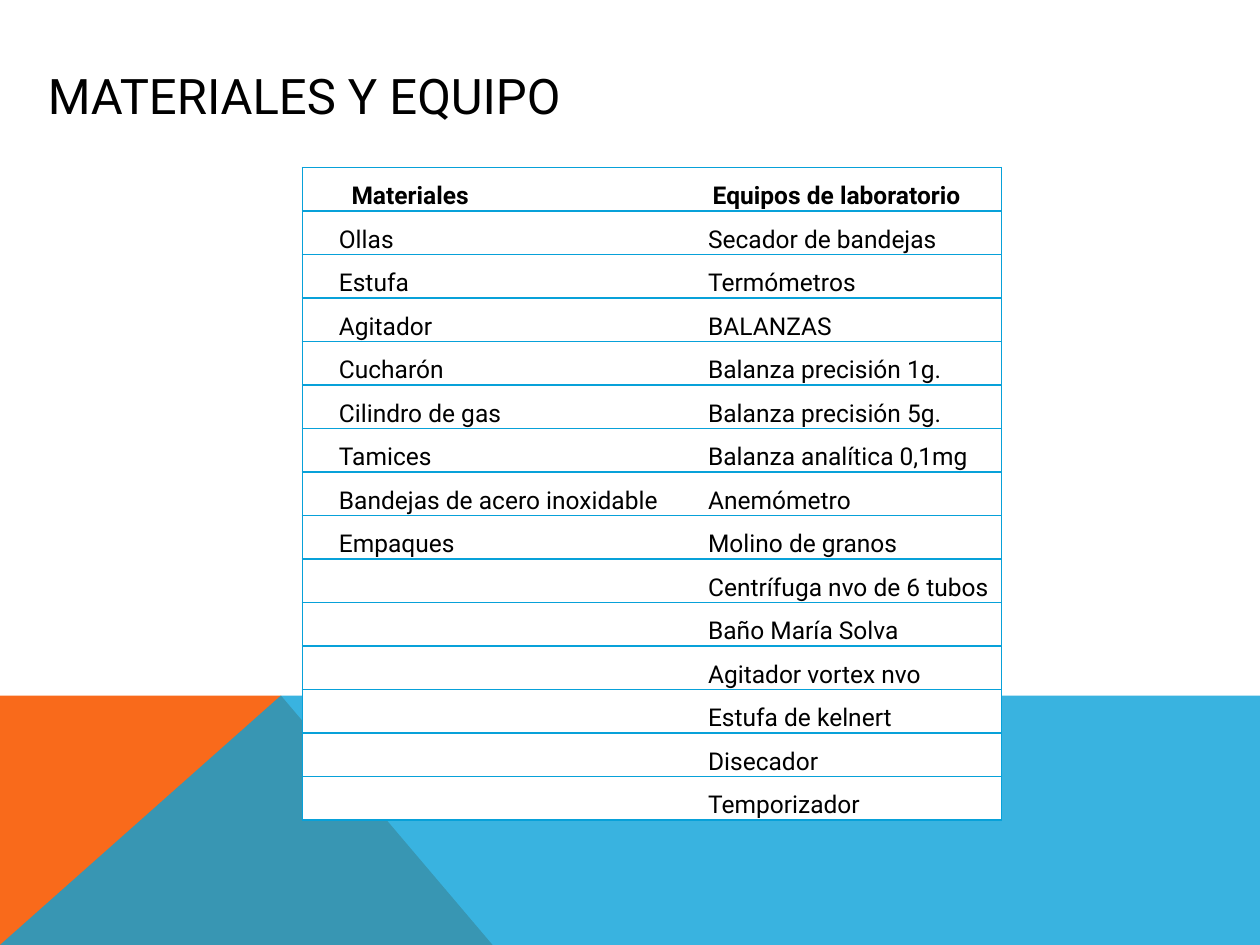
from dataclasses import dataclass
from itertools import zip_longest

from lxml import etree
from pptx import Presentation
from pptx.dml.color import RGBColor
from pptx.enum import text
from pptx.oxml.ns import qn
from pptx.util import Inches, Pt


@dataclass(frozen=True)
class Theme:
    font: str = "Roboto"
    ink: str = "000000"
    paper: str = "FFFFFF"
    blue: str = "08A1D9"
    orange: str = "F96A1B"
    title_size: int = 28
    cell_size: int = 14


@dataclass(frozen=True)
class Band:
    points: tuple
    color: str
    alpha: int = 100


@dataclass(frozen=True)
class Column:
    width: float
    header: str
    header_indent: float
    header_align: text.PP_ALIGN
    items: tuple
    sides: str  # edges that carry a line


T = Theme()
ITEM_INDENT = 0.25
ROW_HEIGHT = 0.26
BAND_TOP = 5.52
PEAK_X = 2.23

BANDS = (
    Band(((0, 7.5), (0, BAND_TOP), (PEAK_X, BAND_TOP), (3.91, 7.5)), T.orange),
    Band(((0, 7.5), (PEAK_X, BAND_TOP), (10, BAND_TOP), (10, 7.5)), T.blue, 80),
)

COLUMNS = (
    Column(2.93, "Materiales", 0.35, text.PP_ALIGN.LEFT,
           ("Ollas", "Estufa", "Agitador", "Cucharón", "Cilindro de gas",
            "Tamices", "Bandejas de acero inoxidable", "Empaques"), "LTB"),
    Column(2.62, "Equipos de laboratorio", 0, text.PP_ALIGN.CENTER,
           ("Secador de bandejas", "Termómetros", "BALANZAS",
            "Balanza precisión 1g.", "Balanza precisión 5g.",
            "Balanza analítica 0,1mg", "Anemómetro", "Molino de granos",
            "Centrífuga nvo de 6 tubos", "Baño María Solva",
            "Agitador vortex nvo", "Estufa de kelnert", "Disecador",
            "Temporizador"), "RTB"),
)


def style_runs(p, size: int, bold: bool = False) -> None:
    for r in p.runs:
        r.font.name = T.font
        r.font.size = Pt(size)
        r.font.bold = bold
        r.font.color.rgb = RGBColor.from_string(T.ink)


def draw_band(s, band: Band) -> None:
    start, *rest = [(Inches(x), Inches(y)) for x, y in band.points]
    builder = s.shapes.build_freeform(*start)
    builder.add_line_segments(rest, close=True)
    sp = builder.convert_to_shape()
    sp.shadow.inherit = False
    sp.line.fill.background()
    sp.fill.solid()
    sp.fill.fore_color.rgb = RGBColor.from_string(band.color)
    if band.alpha < 100:
        clr = sp.fill._xPr.find(qn("a:solidFill"))[0]
        etree.SubElement(clr, qn("a:alpha"), val=str(band.alpha * 1000))


def set_borders(cell, sides: str) -> None:
    tcPr = cell._tc.get_or_add_tcPr()
    for i, side in enumerate("LRTB"):  # lines precede the fill
        ln = etree.Element(qn(f"a:ln{side}"), w=str(Pt(1)))
        if side in sides:
            fill = etree.SubElement(ln, qn("a:solidFill"))
            etree.SubElement(fill, qn("a:srgbClr"), val=T.blue)
        else:
            etree.SubElement(ln, qn("a:noFill"))
        tcPr.insert(i, ln)


def fill_cell(cell, value: str, indent: float, align, bold: bool, sides: str) -> None:
    cell.margin_left = cell.margin_right = Inches(0.04)
    cell.margin_top = cell.margin_bottom = 0
    cell.fill.solid()
    cell.fill.fore_color.rgb = RGBColor.from_string(T.paper)
    set_borders(cell, sides)
    if not value:
        return
    cell.text_frame.text = value
    p = cell.text_frame.paragraphs[0]
    p.alignment = align
    p.line_spacing = 1.5
    p.space_before = Pt(6)
    pPr = p._p.get_or_add_pPr()
    pPr.set("marL", str(Inches(indent)))
    pPr.set("indent", "0")
    style_runs(p, T.cell_size, bold)


def draw_table(s, columns: tuple, left: float, top: float) -> None:
    rows = list(zip_longest(*(c.items for c in columns), fillvalue=""))
    n = len(rows) + 1
    width = sum(c.width for c in columns)
    table = s.shapes.add_table(n, len(columns), Inches(left), Inches(top),
                               Inches(width), Inches(ROW_HEIGHT * n)).table
    table.first_row = table.horz_banding = False
    for row in table.rows:
        row.height = Inches(ROW_HEIGHT)
    for j, c in enumerate(columns):
        table.columns[j].width = Inches(c.width)
        fill_cell(table.cell(0, j), c.header, c.header_indent,
                  c.header_align, True, c.sides)
        for i, row in enumerate(rows, start=1):
            fill_cell(table.cell(i, j), row[j], ITEM_INDENT,
                      text.PP_ALIGN.LEFT, False, c.sides)


def main() -> None:
    prs = Presentation()
    prs.slide_width, prs.slide_height = Inches(10), Inches(7.5)
    s = prs.slides.add_slide(prs.slide_layouts[5])

    # Coloured bands at the foot
    for band in BANDS:
        draw_band(s, band)

    # Title
    title = s.shapes.title
    title.left, title.top = Inches(0.28), Inches(0.13)
    title.width, title.height = Inches(9), Inches(1.25)
    tf = title.text_frame
    tf.text = "MATERIALES Y EQUIPO"
    tf.vertical_anchor = text.MSO_ANCHOR.MIDDLE
    tf.paragraphs[0].alignment = text.PP_ALIGN.LEFT
    style_runs(tf.paragraphs[0], T.title_size)

    # Materials and equipment
    draw_table(s, COLUMNS, 2.4, 1.33)

    prs.save("out.pptx")


if __name__ == "__main__":
    main()
